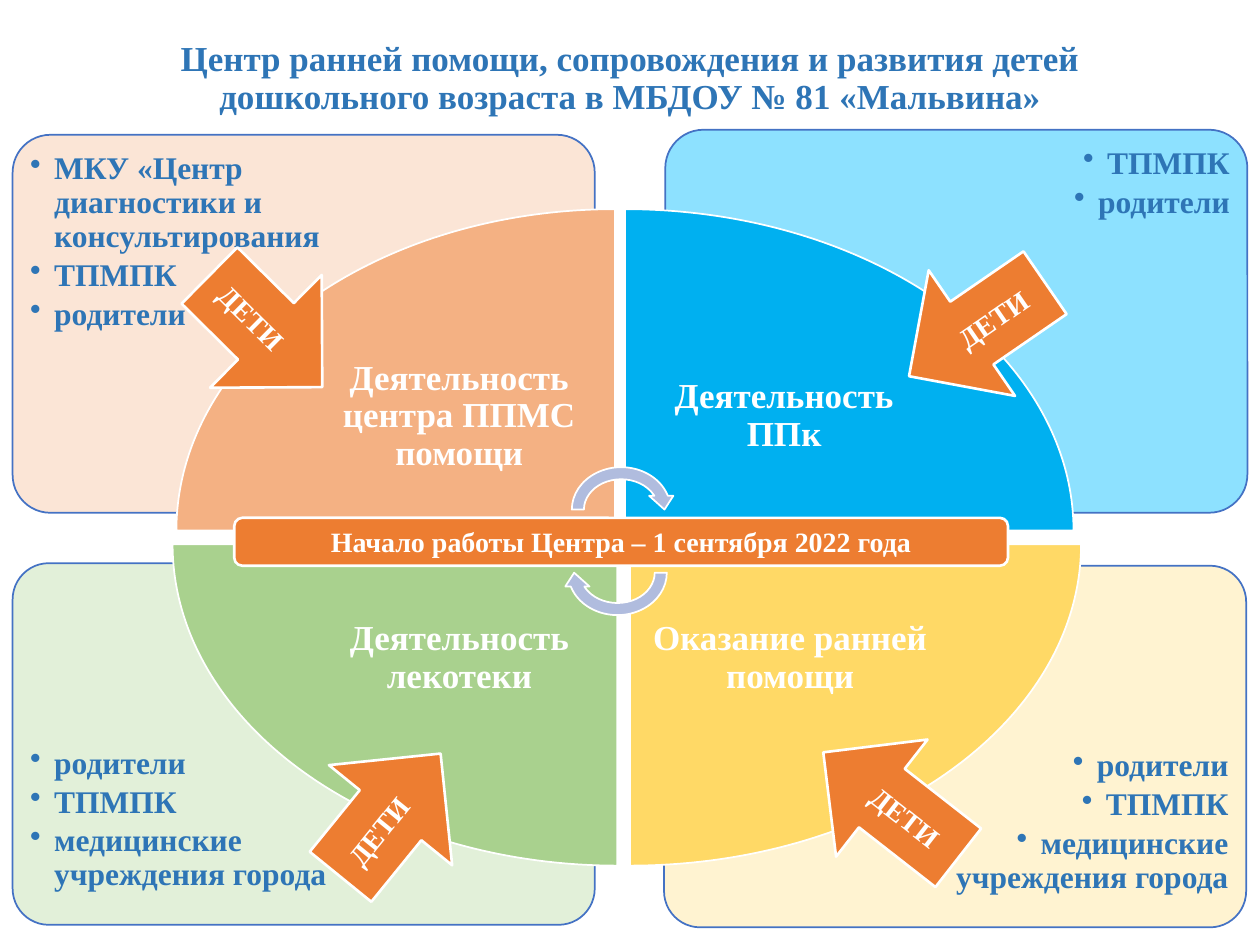
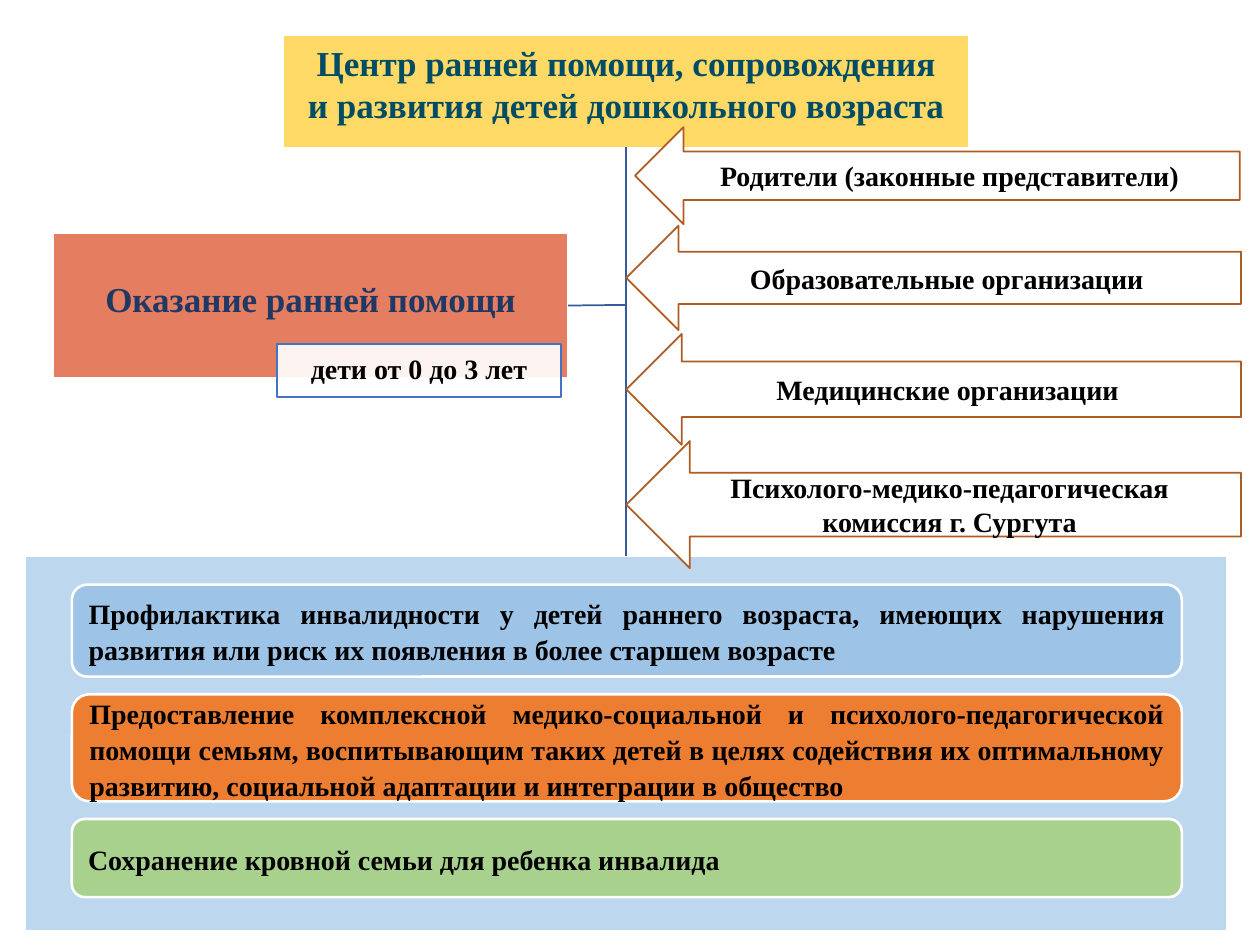
from dataclasses import dataclass

from lxml import etree
from pptx import Presentation
from pptx.dml.color import RGBColor
from pptx.enum.shapes import MSO_CONNECTOR, MSO_SHAPE
from pptx.enum.text import MSO_ANCHOR, PP_ALIGN
from pptx.oxml.ns import qn
from pptx.util import Inches, Pt

LEFT, CENTER, RIGHT = PP_ALIGN.LEFT, PP_ALIGN.CENTER, PP_ALIGN.RIGHT
JUSTIFY = PP_ALIGN.JUSTIFY
TOP, MIDDLE = MSO_ANCHOR.TOP, MSO_ANCHOR.MIDDLE
RECT, ROUND_RECT = MSO_SHAPE.RECTANGLE, MSO_SHAPE.ROUNDED_RECTANGLE
WEDGE, CYCLE_ARROW = MSO_SHAPE.PIE_WEDGE, MSO_SHAPE.CIRCULAR_ARROW
LEFT_ARROW, RIGHT_ARROW = MSO_SHAPE.LEFT_ARROW, MSO_SHAPE.RIGHT_ARROW
BANNER = MSO_SHAPE.FLOWCHART_ALTERNATE_PROCESS
STRAIGHT = MSO_CONNECTOR.STRAIGHT
SIDE_TOP, SIDE_RIGHT, SIDE_BOTTOM = 0, 3, 2
BLANK_LAYOUT = 6


@dataclass(frozen=True)
class Theme:
    """Colours, font and type sizes shared by the slides."""
    font: str = "Times New Roman"
    title: int = 20
    body: int = 18
    small: int = 16
    white: str = "FFFFFF"
    black: str = "000000"
    blue: str = "2E75B6"
    outline: str = "4472C4"
    link: str = "365B9D"
    orange: str = "ED7D31"
    green: str = "A9D18E"
    yellow: str = "FFD966"
    peach: str = "F4B183"
    cyan: str = "00B0F0"
    cycle: str = "B0BCDE"
    teal: str = "004C64"
    navy: str = "203864"
    coral: str = "DB4C25"
    arrow_line: str = "AF5C24"
    pale_blue: str = "BDD7EE"
    mid_blue: str = "9DC3E6"


T = Theme()


@dataclass(frozen=True)
class Quadrant:
    """One quarter of the centre's scheme."""
    panel: tuple
    panel_fill: str
    alpha: int
    wedge: tuple
    wedge_fill: str
    turn: int
    label: str
    partners: tuple
    arrow: tuple
    arrow_kind: int
    arrow_turn: float


QUADRANTS = (
    Quadrant((0.1, 1.07, 4.62, 3), "FBE5D6", 100, (1.4, 1.66, 3.48, 2.55), T.peach, 0,
             "Деятельность центра ППМС помощи",
             ("МКУ «Центр диагностики и консультирования", "ТПМПК", "родители"),
             (1.48, 2, 1.26, 1.26), RIGHT_ARROW, 44.7),
    Quadrant((5.28, 1.03, 4.62, 3.04), "81DEFF", 90, (4.96, 1.66, 3.56, 2.55), T.cyan, 90,
             "Деятельность ППк", ("ТПМПК", "родители"),
             (7.1, 2.01, 1.31, 1.21), LEFT_ARROW, 325.5),
    Quadrant((5.27, 4.49, 4.62, 2.87), "FFF2CC", 90, (5, 4.32, 3.58, 2.55), T.yellow, 180,
             "Оказание ранней помощи",
             ("родители", "ТПМПК", "медицинские учреждения города"),
             (6.39, 5.8, 1.36, 1.18), LEFT_ARROW, 38),
    Quadrant((0.1, 4.47, 4.62, 2.87), "E2F0D9", 100, (1.37, 4.32, 3.53, 2.55), T.green, 270,
             "Деятельность лекотеки",
             ("родители", "ТПМПК", "медицинские учреждения города"),
             (2.47, 5.84, 1.26, 1.26), RIGHT_ARROW, 309.1),
)

PARTNERS = (
    ((5.04, 1.01, 4.8, 0.77), "Родители (законные представители)"),
    ((4.97, 1.79, 4.88, 0.83), "Образовательные организации"),
    ((4.97, 2.65, 4.88, 0.88), "Медицинские организации"),
    ((4.97, 3.5, 4.88, 1.01), "Психолого-медико-педагогическая комиссия г. Сургута"),
)

GOALS = (
    (0.73, T.mid_blue, "Профилактика инвалидности у детей раннего возраста, имеющих "
     "нарушения развития или риск их появления в более старшем возрасте"),
    (0.85, T.orange, "Предоставление комплексной медико-социальной и "
     "психолого-педагогической помощи семьям, воспитывающим таких детей в целях "
     "содействия их оптимальному развитию, социальной адаптации и интеграции в общество"),
    (0.62, T.green, "Сохранение кровной семьи для ребенка инвалида"),
)


def rgb(color):
    """Turn a hex string into a colour."""
    return RGBColor.from_string(color)


def add_bullet(p):
    """Give a paragraph a hanging round bullet."""
    pPr = p._p.get_or_add_pPr()
    pPr.set("marL", str(Inches(0.19)))
    pPr.set("indent", str(-Inches(0.19)))
    etree.SubElement(pPr, qn("a:buChar")).set("char", "•")


def write(sp, lines, size, color, align=CENTER, anchor=MIDDLE, inset=None,
          spacing=None, after=0, bullets=False):
    """Fill a shape with bold paragraphs in one style."""
    tf = sp.text_frame
    tf.word_wrap = True
    tf.vertical_anchor = anchor
    if inset:
        tf.margin_left, tf.margin_top, tf.margin_right, tf.margin_bottom = map(Inches, inset)
    tf.text = "\n".join(lines)
    for p in tf.paragraphs:
        if bullets:
            add_bullet(p)
        p.alignment = align
        p.line_spacing = spacing
        p.space_after = Pt(after)
        for r in p.runs:
            r.font.name, r.font.size, r.font.bold = T.font, Pt(size), True
            r.font.color.rgb = rgb(color)


def add_text(slide, box, lines, size, color, **style):
    """Add a text box."""
    write(slide.shapes.add_textbox(*map(Inches, box)), lines, size, color, **style)


def add_shape(slide, kind, box, fill, line=T.white, width=1.0, alpha=100, turn=0):
    """Add a filled and outlined preset shape."""
    sp = slide.shapes.add_shape(kind, *map(Inches, box))
    sp.shadow.inherit = False
    sp.rotation = turn
    sp.fill.solid()
    sp.fill.fore_color.rgb = rgb(fill)
    if alpha < 100:
        clr = sp._element.spPr.find(qn("a:solidFill"))[0]
        etree.SubElement(clr, qn("a:alpha")).set("val", str(alpha * 1000))
    sp.line.color.rgb = rgb(line)
    sp.line.width = Pt(width)
    return sp


def add_link(slide, start, end, begin=None, finish=None):
    """Add a thin connector, joined to the given shape sides."""
    con = slide.shapes.add_connector(STRAIGHT, *map(Inches, start + end))
    if begin:
        con.begin_connect(*begin)
    if finish:
        con.end_connect(*finish)
    con.line.color.rgb = rgb(T.link)
    con.line.width = Pt(1)
    etree.SubElement(con._element.spPr, qn("a:effectLst"))


def upright_box(box, turn):
    """Give the unrotated frame of a shape that covers box after a quarter turn."""
    x, y, w, h = box
    if turn % 180 == 0:
        return box
    return x + (w - h) / 2, y + (h - w) / 2, h, w


def draw_quadrant(slide, q):
    """Draw a partner panel, its wedge with label, and the children arrow."""
    x, y, w, h = q.panel
    on_right, on_bottom = q.turn in (90, 180), q.turn in (180, 270)
    panel = add_shape(slide, ROUND_RECT, q.panel, q.panel_fill, T.outline, alpha=q.alpha)
    panel.adjustments[0] = 0.1
    list_w = 3.1
    list_x = x + w - list_w - 0.07 if on_right else x + 0.07
    list_top = 1.39 if on_bottom else 0.07
    add_text(slide, (list_x, y + list_top, list_w, h - list_top - 0.07), q.partners,
             T.body, T.blue, align=RIGHT if on_right else LEFT, anchor=TOP,
             inset=(0.07,) * 4, spacing=0.9, after=2.7, bullets=True)

    add_shape(slide, WEDGE, upright_box(q.wedge, q.turn), q.wedge_fill, turn=q.turn)
    x, y, w, h = q.wedge
    label_w, label_h = w * 0.71, h * 0.71
    label_x = x if on_right else x + w - label_w
    label_y = y if on_bottom else y + h - label_h
    add_text(slide, (label_x, label_y, label_w, label_h), [q.label], T.title, T.white,
             inset=(0.16,) * 4, spacing=0.9)

    arrow = add_shape(slide, q.arrow_kind, q.arrow, T.orange, width=1.5, turn=q.arrow_turn)
    write(arrow, ["ДЕТИ"], T.small, T.white)


def draw_hub(slide, box):
    """Draw the start-date banner with a cycle arrow above and below it."""
    x, y, w, h = box
    add_shape(slide, CYCLE_ARROW, (x + 2.63, y - 0.45, 0.88, 0.77), T.cycle)
    add_shape(slide, CYCLE_ARROW, (x + 2.6, y + 0.05, 0.88, 0.77), T.cycle, turn=180)
    banner = add_shape(slide, BANNER, box, T.orange, width=1.5)
    write(banner, ["Начало работы Центра – 1 сентября 2022 года"], T.small, T.white)


def draw_goals(slide, box):
    """Stack the goal bars inside the goals panel."""
    x, y, w, _ = box
    top = y + 0.23
    for height, fill, text in GOALS:
        bar = add_shape(slide, ROUND_RECT, (x + 0.37, top, w - 0.73, height), fill, width=1.5)
        write(bar, [text], T.small, T.black, align=JUSTIFY, spacing=1.07)
        top += height + 0.14


def draw_help(slide, box):
    """Draw the early help block with its age tag."""
    x, y, w, h = box
    block = add_shape(slide, RECT, box, T.coral, alpha=72)
    write(block, ["Оказание ранней помощи"], T.title, T.navy, inset=(0.01, 0.01, 0.01, 0.13))
    tag = add_shape(slide, RECT, (x + 1.78, y + h - 0.27, 2.25, 0.42), T.white,
                    T.outline, alpha=90)
    write(tag, ["дети от 0 до 3 лет"], T.small, T.black,
          inset=(0.04, 0.01, 0.04, 0.01), spacing=0.9)
    return block


def build_scheme(slide):
    """Build the slide with the four activities of the centre."""
    add_text(slide, (0.69, 0.35, 8.62, 0.56),
             ["Центр ранней помощи, сопровождения и развития детей "
              "дошкольного возраста в МБДОУ № 81 «Мальвина»"],
             T.title, T.blue, spacing=0.9)
    for q in QUADRANTS:
        draw_quadrant(slide, q)
    draw_hub(slide, (1.86, 4.11, 6.14, 0.38))


def build_early_help(slide):
    """Build the slide on early help, its partners and goals."""
    goals_box = (0.2, 4.41, 9.54, 2.98)
    head = add_shape(slide, RECT, (2.25, 0.28, 5.44, 0.89), T.yellow)
    write(head, ["Центр ранней помощи, сопровождения", "и развития детей дошкольного возраста"],
          T.title, T.teal, inset=(0.01, 0.01, 0.01, 0.13))
    goals = add_shape(slide, RECT, goals_box, T.pale_blue)
    block = draw_help(slide, (0.42, 1.85, 4.09, 1.15))
    add_link(slide, (4.97, 1.17), (4.97, 4.41), (head, SIDE_BOTTOM), (goals, SIDE_TOP))
    add_link(slide, (4.51, 2.42), (4.97, 2.42), begin=(block, SIDE_RIGHT))
    for box, text in PARTNERS:
        arrow = add_shape(slide, LEFT_ARROW, box, T.white, T.arrow_line)
        write(arrow, [text], T.small, T.black)
    draw_goals(slide, goals_box)


def main():
    """Build and save the presentation."""
    prs = Presentation()
    prs.slide_width, prs.slide_height = Inches(10), Inches(7.5)
    for build in (build_scheme, build_early_help):
        build(prs.slides.add_slide(prs.slide_layouts[BLANK_LAYOUT]))
    prs.save("out.pptx")


if __name__ == "__main__":
    main()
